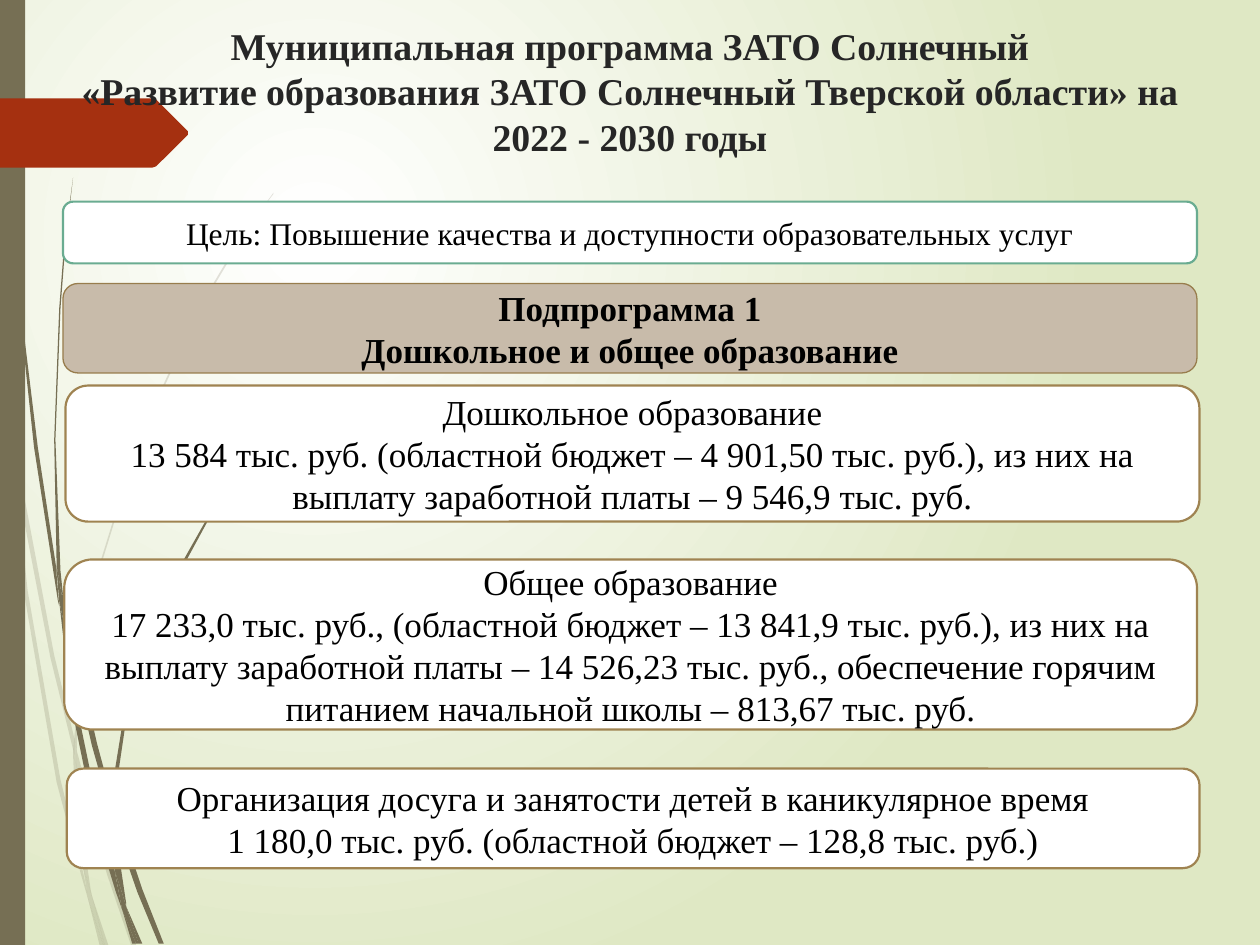
import pptx
import pptx.util
import pptx.oxml
import pptx.dml.color
import pptx.enum.shapes
import pptx.enum.text
import lxml.etree

KIND = pptx.enum.shapes.MSO_SHAPE
FLOW, ROUND = KIND.FLOWCHART_ALTERNATE_PROCESS, KIND.ROUNDED_RECTANGLE
FONT = "Times New Roman"
INCH = 2.54
COLOR = {
    "olive": "766F54", "red": "A53010", "white": "FFFFFF", "lime": "DFE8C4",
    "tan": "C8BBAA", "green": "6AAC91", "brown": "987D4D", "gold": "9F8351",
    "black": "000000", "dark": "262626",
}

TITLE = ("Муниципальная программа ЗАТО Солнечный\v"
         "«Развитие образования ЗАТО Солнечный Тверской области» на 2022 - 2030 годы")

BOXES = [
    (FLOW, (0.5, 1.6, 9, 0.49), "white", "green", 1.25, 18, False,
     ["Цель: Повышение качества и доступности образовательных услуг"]),
    (FLOW, (0.5, 2.25, 9, 0.71), "tan", "brown", 0.75, 20, True,
     ["Подпрограмма 1", "Дошкольное и общее образование"]),
    (ROUND, (0.52, 3.06, 9, 1.08), "white", "gold", 1.25, 20, False,
     ["Дошкольное образование",
      "13 584 тыс. руб. (областной бюджет – 4 901,50 тыс. руб.), из них на "
      "выплату заработной платы – 9 546,9 тыс. руб."]),
    (ROUND, (0.51, 4.44, 8.99, 1.35), "white", "gold", 1.25, 20, False,
     ["Общее образование",
      "17 233,0 тыс. руб., (областной бюджет – 13 841,9 тыс. руб.), из них на "
      "выплату заработной платы – 14 526,23 тыс. руб., обеспечение горячим "
      "питанием начальной школы – 813,67 тыс. руб."]),
    (ROUND, (0.53, 6.1, 8.99, 0.79), "white", "gold", 1.25, 20, False,
     ["Организация досуга и занятости детей в каникулярное время",
      "1 180,0 тыс. руб. (областной бюджет – 128,8 тыс. руб.)"]),
]

PALE = [
    [(0.08, 3.5), (0.06, 3.22), (0, 2.82), (0, 2.99), (0.07, 3.44)],
    [(0.4, 5.22), (0.59, 5.99), (0.59, 5.86), (0.43, 5.2), (0.1, 3.45), (0.12, 3.76)],
    [(0.64, 6.07), (0.61, 5.96), (0.61, 6.1), (0.85, 6.94), (1.04, 7.5), (1.08, 7.5),
     (0.88, 6.92)],
    [(0.83, 7.5), (0.86, 7.5), (0.73, 7.11)],
    [(0.64, 6.83), (0.48, 6.19), (0.22, 4.69), (0.12, 3.76), (0.08, 3.5), (0.19, 4.7),
     (0.45, 6.21), (0.64, 6.93), (0.7, 7.14), (0.69, 7.07)],
    [(0.58, 5.99), (0.6, 6.46), (0.64, 6.83), (0.67, 6.92), (0.73, 7.11), (0.72, 7.06),
     (0.63, 6.46), (0.61, 6.1), (0.61, 6.08)],
    [(0.61, 5.84), (0.76, 4.62), (1.11, 3.49), (1.59, 2.45), (1.87, 1.98), (2.01, 1.75),
     (2.17, 1.54), (2.17, 1.53), (2.01, 1.75), (1.86, 1.97), (1.58, 2.44), (1.1, 3.48),
     (0.75, 4.61), (0.59, 5.84), (0.59, 5.86), (0.61, 5.96)],
    [(0.7, 7.14), (0.79, 7.5), (0.82, 7.5)],
    [(0.61, 6.08), (0.61, 6.1), (0.61, 5.96), (0.59, 5.86), (0.58, 5.99)],
    [(0.67, 6.92), (0.65, 6.83), (0.69, 7.07), (0.7, 7.14), (0.82, 7.5), (0.83, 7.5),
     (0.73, 7.11)],
]
SOLID = [
    [(0.05, 1.1), (0.14, 2.33), (0.27, 3.55), (0.46, 4.77), (0.47, 4.81), (0.45, 4.57),
     (0.45, 4.53), (0.3, 3.55), (0.15, 2.32), (0.06, 1.09), (0.04, 0.48), (0.03, 0),
     (0.02, 0), (0.03, 0.48)],
    [(0.73, 5.92), (0.88, 6.45), (0.88, 6.33), (0.88, 6.31), (0.77, 5.9), (0.5, 4.72),
     (0.53, 5.05)],
    [(0.94, 6.49), (0.91, 6.41), (0.91, 6.56), (1.09, 7.08), (1.26, 7.49), (1.3, 7.49),
     (1.13, 7.06)],
    [(0.91, 6.91), (0.81, 6.57), (0.6, 5.56), (0.53, 5.05), (0.47, 4.77), (0.56, 5.57),
     (0.77, 6.59), (0.92, 7.08), (0.97, 7.22), (0.96, 7.17)],
    [(0.5, 4.72), (0.48, 4.53), (0.44, 3.49), (0.48, 2.45), (0.52, 1.93), (0.58, 1.41),
     (0.51, 1.93), (0.47, 2.45), (0.43, 3.49), (0.45, 4.49), (0.49, 4.72)],
    [(1.1, 7.49), (1.13, 7.49), (1, 7.19)],
    [(0.47, 4.77), (0.53, 5.05), (0.5, 4.72), (0.49, 4.72), (0.45, 4.49), (0.45, 4.53)],
    [(0.91, 6.33), (1.03, 5.52), (1.31, 4.76), (1.69, 4.06), (1.91, 3.74), (2.03, 3.59),
     (2.16, 3.44), (2.15, 3.44), (2.03, 3.58), (1.91, 3.73), (1.68, 4.05), (1.29, 4.74),
     (1.01, 5.51), (0.88, 6.31), (0.91, 6.41)],
    [(0.97, 7.22), (1.05, 7.49), (1.08, 7.49)],
    [(0.88, 6.45), (0.91, 6.91), (0.96, 7.06), (1, 7.19), (1, 7.16), (0.91, 6.56),
     (0.9, 6.51)],
    [(0.96, 7.06), (0.91, 6.91), (0.96, 7.17), (0.97, 7.22), (1.08, 7.49), (1.1, 7.49),
     (1, 7.19)],
]
ARROW = [(0, 0.78), (1.21, 0.78), (1.24, 0.79), (1.49, 1.04), (1.49, 1.07),
         (1.24, 1.32), (1.21, 1.33), (0, 1.33)]


def size(*vals):
    return [pptx.util.Cm(val * INCH) for val in vals]


def rgb(name):
    return pptx.dml.color.RGBColor.from_string(COLOR[name])


def paint(shape, fill, line=None, width=0):
    shape.shadow.inherit = False
    shape.fill.solid()
    shape.fill.fore_color.rgb = rgb(fill)
    if line:
        shape.line.color.rgb = rgb(line)
        shape.line.width = pptx.util.Pt(width)
    else:
        shape.line.fill.background()


def trace(slide, dots, fill, alpha=None):
    start, *rest = [size(*dot) for dot in dots]
    form = slide.shapes.build_freeform(*start)
    form.add_line_segments(rest, close=True)
    shape = form.convert_to_shape()
    paint(shape, fill)
    if alpha:
        tone = shape.fill._xPr.find(".//" + pptx.oxml.ns.qn("a:srgbClr"))
        lxml.etree.SubElement(tone, pptx.oxml.ns.qn("a:alpha"), val=str(alpha * 1000))


def write(shape, lines, points, color, bold):
    frame = shape.text_frame
    frame.word_wrap = True
    for num, line in enumerate(lines):
        para = frame.add_paragraph() if num else frame.paragraphs[0]
        para.text = line
        para.alignment = pptx.enum.text.PP_ALIGN.CENTER
        para.font.name = FONT
        para.font.size = pptx.util.Pt(points)
        para.font.bold = bold
        para.font.color.rgb = rgb(color)


def glow(slide):
    stops = "".join(
        f'<a:gs pos="{pos}"><a:srgbClr val="{COLOR[name]}"/></a:gs>'
        for pos, name in ((0, "white"), (100000, "lime")))
    back = pptx.oxml.parse_xml(
        f'<p:bg {pptx.oxml.ns.nsdecls("p", "a")}><p:bgPr><a:gradFill rotWithShape="1">'
        f'<a:gsLst>{stops}</a:gsLst><a:path path="circle">'
        '<a:fillToRect l="50000" t="50000" r="100000" b="100000"/></a:path>'
        '</a:gradFill><a:effectLst/></p:bgPr></p:bg>')
    slide.element.cSld.insert(0, back)


def main():
    deck = pptx.Presentation()
    deck.slide_width, deck.slide_height = size(10, 7.5)
    slide = deck.slides.add_slide(deck.slide_layouts[6])
    glow(slide)
    for dots in PALE:
        trace(slide, dots, "olive", 20)
    for dots in SOLID:
        trace(slide, dots, "olive")
    paint(slide.shapes.add_shape(KIND.RECTANGLE, *size(0, 0, 0.2, 7.5)), "olive")
    trace(slide, ARROW, "red")
    head = slide.shapes.add_textbox(*size(0.5, 0.13, 9, 1.18))
    write(head, [TITLE], 21.6, "dark", True)
    for kind, place, fill, line, width, points, bold, lines in BOXES:
        box = slide.shapes.add_shape(kind, *size(*place))
        paint(box, fill, line, width)
        box.text_frame.vertical_anchor = pptx.enum.text.MSO_ANCHOR.MIDDLE
        write(box, lines, points, "black", bold)
    deck.save("out.pptx")


if __name__ == "__main__":
    main()
